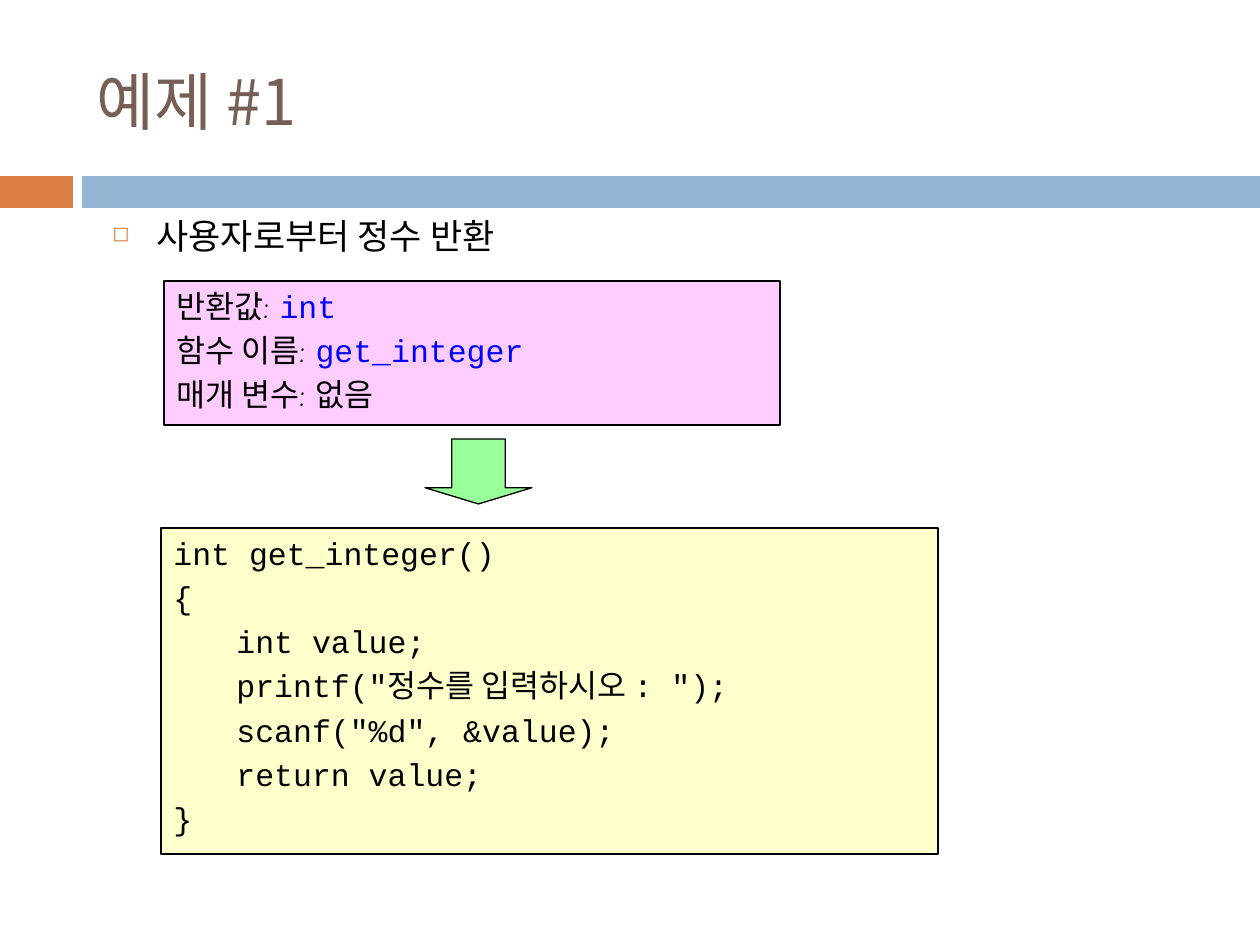
from dataclasses import dataclass

import lxml.etree
import pptx
import pptx.dml.color
import pptx.enum.shapes
import pptx.enum.text
import pptx.oxml.ns
import pptx.util

EMU_PER_PX = 914400 / 126
SHAPES = pptx.enum.shapes.MSO_SHAPE
ANCHORS = pptx.enum.text.MSO_ANCHOR


@dataclass(frozen=True)
class Theme:
    orange: str = "DD8047"
    blue: str = "94B6D2"
    brown: str = "775F55"
    black: str = "000000"
    keyword: str = "0000FF"
    pink: str = "FFCCFF"
    yellow: str = "FFFFCC"
    green: str = "99FF99"
    sans: str = "Noto Sans CJK KR"
    casual: str = "Comic Neue"
    mono: str = "Courier New"
    title_size: int = 36
    bullet_size: int = 20
    box_size: int = 18
    outline: float = 0.75


THEME = Theme()

SIGNATURE = [
    [("반환값: ", THEME.casual, THEME.black), ("int", THEME.mono, THEME.keyword)],
    [("함수 이름: ", THEME.casual, THEME.black), ("get_integer", THEME.mono, THEME.keyword)],
    [("매개 변수: 없음", THEME.casual, THEME.black)],
]

CODE = """int get_integer()
{
\tint value;
\tprintf("정수를 입력하시오 : ");
\tscanf("%d", &value);
\treturn value;
}"""


def px(length):
    return pptx.util.Emu(round(length * EMU_PER_PX))


def color(code):
    return pptx.dml.color.RGBColor.from_string(code)


def add_node(parent, tag, **attributes):
    return lxml.etree.SubElement(parent, pptx.oxml.ns.qn(tag), attributes)


def add_block(page, kind, bounds, fill, outlined=False):
    block = page.shapes.add_shape(kind, *map(px, bounds))
    block.shadow.inherit = False
    block.fill.solid()
    block.fill.fore_color.rgb = color(fill)
    if outlined:
        block.line.color.rgb = color(THEME.black)
        block.line.width = pptx.util.Pt(THEME.outline)
    else:
        block.line.fill.background()
    return block


def format_span(span, font, size, code):
    span.font.name = font
    span.font.size = pptx.util.Pt(size)
    span.font.color.rgb = color(code)
    add_node(span._r.get_or_add_rPr(), "a:ea", typeface=THEME.sans)


def add_label(page, bounds, text, size, code, anchor):
    label = page.shapes.add_textbox(*map(px, bounds))
    frame = label.text_frame
    frame.word_wrap = True
    frame.vertical_anchor = anchor
    frame.text = text
    para = frame.paragraphs[0]
    format_span(para.runs[0], THEME.sans, size, code)
    return para


def set_indent(para, indent):
    properties = para._p.get_or_add_pPr()
    properties.set("marL", str(px(indent)))
    properties.set("indent", str(-px(indent)))
    return properties


def add_bullet(page, bounds, text):
    para = add_label(page, bounds, text, THEME.bullet_size, THEME.black, ANCHORS.TOP)
    para.line_spacing = 0.9
    para.space_before = pptx.util.Pt(7)
    properties = set_indent(para, 44)
    add_node(add_node(properties, "a:buClr"), "a:srgbClr", val=THEME.orange)
    add_node(properties, "a:buSzPct", val="60000")
    add_node(properties, "a:buChar", char="◻")


def add_text_box(page, bounds, fill, lines, indent=0):
    box = add_block(page, SHAPES.RECTANGLE, bounds, fill, outlined=True)
    frame = box.text_frame
    frame.word_wrap = True
    frame.vertical_anchor = ANCHORS.TOP
    for index, line in enumerate(lines):
        para = frame.add_paragraph() if index else frame.paragraphs[0]
        para.alignment = pptx.enum.text.PP_ALIGN.LEFT
        properties = set_indent(para, indent)
        add_node(add_node(properties, "a:spcBef"), "a:spcPct", val="20000")
        for text, font, code in line:
            span = para.add_run()
            span.text = text
            format_span(span, font, THEME.box_size, code)


def main():
    deck = pptx.Presentation()
    deck.slide_width = px(1260)
    deck.slide_height = px(945)
    page = deck.slides.add_slide(deck.slide_layouts[6])

    add_block(page, SHAPES.RECTANGLE, (0, 176, 73, 32), THEME.orange)
    add_block(page, SHAPES.RECTANGLE, (82, 176, 1178, 32), THEME.blue)
    add_label(page, (84, 32, 1124, 136), "예제 #1", THEME.title_size, THEME.brown, ANCHORS.MIDDLE)
    add_bullet(page, (100, 213, 1131, 52), "사용자로부터 정수 반환")

    add_text_box(page, (164, 281, 616, 144), THEME.pink, SIGNATURE, indent=48)
    code_lines = [[(line, THEME.mono, THEME.black)] for line in CODE.split("\n")]
    add_text_box(page, (161, 528, 777, 326), THEME.yellow, code_lines)
    arrow = add_block(page, SHAPES.DOWN_ARROW, (425, 439, 107, 65), THEME.green, outlined=True)
    arrow.adjustments[0] = 0.5
    arrow.adjustments[1] = 0.25

    deck.save("out.pptx")


if __name__ == "__main__":
    main()
